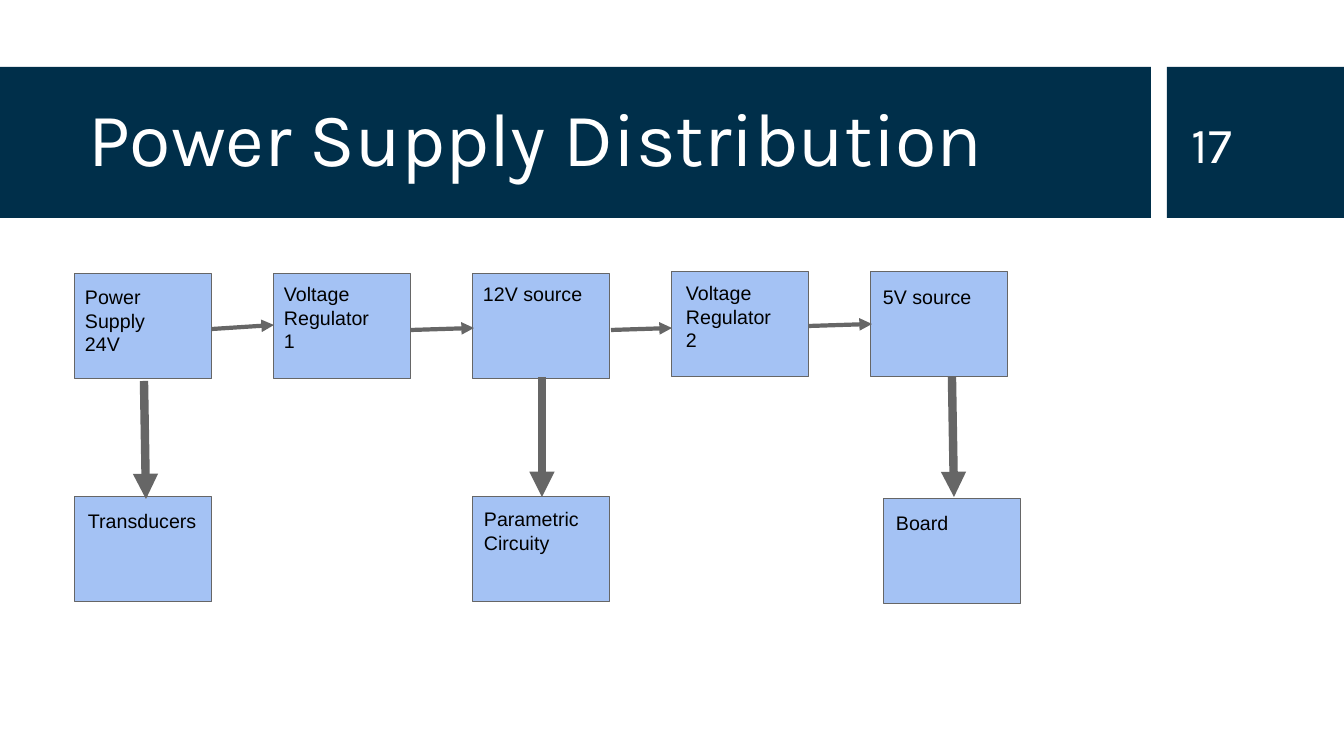
from lxml import etree
from pptx import Presentation
from pptx.dml.color import RGBColor
from pptx.enum.shapes import MSO_CONNECTOR, MSO_SHAPE
from pptx.enum.text import MSO_ANCHOR as ANCHOR
from pptx.oxml.ns import qn
from pptx.util import Pt

PX = 914400 / 100.8
NAVY = RGBColor(0x00, 0x2F, 0x4A)
BLUE = RGBColor(0xA4, 0xC2, 0xF4)
GREY = RGBColor(0x66, 0x66, 0x66)
WHITE = RGBColor(0xFF, 0xFF, 0xFF)
BLACK = RGBColor(0x00, 0x00, 0x00)

NODE_W, NODE_H = 137, 105
COLUMNS = [75 + 199 * i for i in range(5)]

# Left, top, label shift right, label shift down, label lines
NODES = [
    (COLUMNS[0], 274, 0, 1, ["Power Supply", "24V"]),
    (COLUMNS[1], 274, 0, -2, ["Voltage", "Regulator", "1"]),
    (COLUMNS[2], 274, 0, -2, ["12V source"]),
    (COLUMNS[3], 272, 4, -1, ["Voltage", "Regulator", "2"]),
    (COLUMNS[4], 272, 2, 3, ["5V source"]),
    (COLUMNS[0], 497, 3, 2, ["Transducers"]),
    (COLUMNS[2], 497, 1, 0, ["Parametric Circuity"]),
    (884, 499, 2, 2, ["Board"]),
]

# Start x, start y, end x, end y
SUPPLY_ARROWS = [
    (212, 329, 274, 325),
    (411, 330, 474, 328),
    (611, 330, 672, 328),
    (809, 326, 872, 324),
]
LOAD_ARROWS = [
    (144, 381, 146, 499),
    (542, 377, 542, 497),
    (952, 377, 954, 497),
]


def px(*values):
    return [round(v * PX) for v in values]


def add_box(s, left, top, width, height, fill, line=None):
    sp = s.shapes.add_shape(MSO_SHAPE.RECTANGLE, *px(left, top, width, height))
    sp.shadow.inherit = False
    sp.fill.solid()
    sp.fill.fore_color.rgb = fill
    if line is None:
        sp.line.fill.background()
    else:
        sp.line.color.rgb = line
        sp.line.width = Pt(0.75)


def add_text(s, box, lines, size, font, color, inset, anchor=ANCHOR.TOP, spacing=1.0):
    tf = s.shapes.add_textbox(*px(*box)).text_frame
    tf.word_wrap = True
    tf.vertical_anchor = anchor
    tf.margin_left, tf.margin_top = tf.margin_right, tf.margin_bottom = px(*inset)
    for i, line in enumerate(lines):
        p = tf.paragraphs[0] if i == 0 else tf.add_paragraph()
        p.add_run().text = line
        p.line_spacing = spacing
        p.font.size = Pt(size)
        p.font.name = font
        p.font.color.rgb = color


def add_arrow(s, ends, width):
    arrow = s.shapes.add_connector(MSO_CONNECTOR.STRAIGHT, *px(*ends))
    arrow.line.color.rgb = GREY
    arrow.line.width = Pt(width)
    etree.SubElement(arrow.line._get_or_add_ln(), qn("a:tailEnd"), type="triangle")
    etree.SubElement(arrow._element.spPr, qn("a:effectLst"))


def main():
    prs = Presentation()
    prs.slide_width, prs.slide_height = px(1344, 756)
    s = prs.slides.add_slide(prs.slide_layouts[6])

    # Header band and slide number
    add_box(s, 0, 67, 1151, 151, NAVY)
    add_box(s, 1167, 67, 177, 151, NAVY)
    add_text(s, (75, 83, 1059, 119), ["Power Supply Distribution"], 54, "Karla",
             WHITE, (13, 13), ANCHOR.MIDDLE, 0.9)
    add_text(s, (1182, 83, 127, 120), ["17"], 36, "Karla",
             WHITE, (10, 5), ANCHOR.MIDDLE)

    # Power blocks with their labels
    for left, top, dx, dy, lines in NODES:
        add_box(s, left, top, NODE_W, NODE_H, BLUE, GREY)
        add_text(s, (left + dx, top + dy, NODE_W, NODE_H), lines, 14, "Arial",
                 BLACK, (10, 10))

    # Supply chain arrows, then arrows to the loads
    for ends in SUPPLY_ARROWS:
        add_arrow(s, ends, 3)
    for ends in LOAD_ARROWS:
        add_arrow(s, ends, 6)

    prs.save("out.pptx")


if __name__ == "__main__":
    main()
